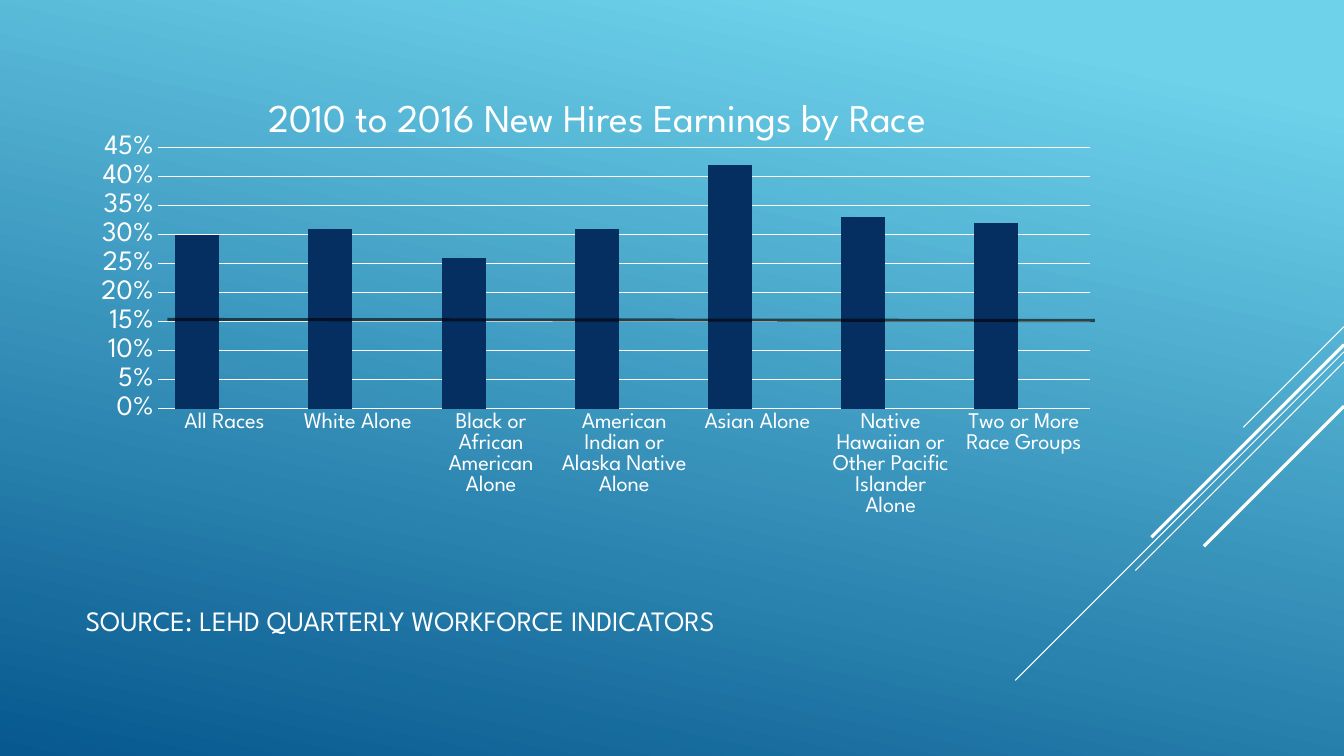
from lxml import etree
from pptx import Presentation
from pptx.chart.data import CategoryChartData
from pptx.dml.color import RGBColor
from pptx.enum.chart import XL_CHART_TYPE as ChartType, XL_TICK_MARK as TickMark
from pptx.enum.shapes import MSO_CONNECTOR as Connector
from pptx.enum.text import MSO_ANCHOR as Anchor
from pptx.oxml import parse_xml
from pptx.oxml.ns import nsdecls, qn
from pptx.util import Inches, Pt

WHITE = RGBColor(0xFF, 0xFF, 0xFF)
BLACK = RGBColor(0, 0, 0)
SKY = RGBColor(0x6E, 0xD2, 0xEB)
DEEP_BLUE = RGBColor(0x06, 0x58, 0x8E)
NAVY = RGBColor(0x05, 0x2F, 0x61)
MAGENTA = RGBColor(0xA5, 0x0E, 0x82)
GREEN = RGBColor(0x14, 0x96, 0x7C)
FONT = "League Spartan"
SLIDE_W, SLIDE_H = 13.33, 7.5

EARNINGS = {
    "All Races": 0.30,
    "White Alone": 0.31,
    "Black or African American Alone": 0.26,
    "American Indian or Alaska Native Alone": 0.31,
    "Asian Alone": 0.42,
    "Native Hawaiian or Other Pacific Islander Alone": 0.33,
    "Two or More Race Groups": 0.32,
}
# Diagonals: height at the right edge, horizontal run, line width
DIAGONALS = [
    (3.24, 1.00, 0.75),
    (3.49, 3.26, 0.75),
    (3.59, 2.07, 0.75),
    (3.42, 1.91, 2.25),
    (4.03, 1.39, 2.25),
]


def set_font(font, size, color=WHITE):
    font.name, font.size, font.bold = FONT, Pt(size), False
    font.color.rgb = color


def write(tf, text, size=20, color=WHITE):
    r = tf.paragraphs[0].add_run()
    r.text = text
    set_font(r.font, size, color)


def add_line(s, start, end, color, width, alpha=None):
    line = s.shapes.add_connector(Connector.STRAIGHT, *map(Inches, start + end))
    line.line.color.rgb = color
    line.line.width = Pt(width)
    if alpha is not None:
        rgb = line.line._ln.find(".//" + qn("a:srgbClr"))
        etree.SubElement(rgb, qn("a:alpha"), val=str(alpha * 1000))
    etree.SubElement(line._element.spPr, qn("a:effectLst"))


def paint_background(s):
    fill = s.background.fill
    fill.gradient()
    fill.gradient_angle = 258
    for stop, color, position in zip(fill.gradient_stops, (SKY, DEEP_BLUE), (0.1, 1)):
        stop.color.rgb = color
        stop.position = position


def add_diagonals(s, right):
    for y, run, width in DIAGONALS:
        add_line(s, (right, y), (right - run, y + run), WHITE, width)


def add_source(s, x, y, w, h):
    tf = s.shapes.add_textbox(*map(Inches, (x, y, w, h))).text_frame
    tf.word_wrap = True
    tf.vertical_anchor = Anchor.MIDDLE
    write(tf, "SOURCE: LEHD QUARTERLY WORKFORCE INDICATORS")


def style_axis(axis, size):
    axis.major_tick_mark = axis.minor_tick_mark = TickMark.NONE
    set_font(axis.tick_labels.font, size)


def fix_plot_area(chart, **fractions):
    """Pin the inner plot area to fractions x, y, w, h of the chart."""
    plot_area = chart._chartSpace.chart.plotArea
    for old in plot_area.findall(qn("c:layout")):
        plot_area.remove(old)
    sizes = "".join(f'<c:{k} val="{v}"/>' for k, v in fractions.items())
    plot_area.insert(0, parse_xml(
        f'<c:layout {nsdecls("c")}><c:manualLayout><c:layoutTarget val="inner"/>'
        f'<c:xMode val="edge"/><c:yMode val="edge"/>{sizes}'
        '</c:manualLayout></c:layout>'))


def add_earnings_chart(s, x, y, w, h):
    data = CategoryChartData(number_format="0%")
    data.categories = list(EARNINGS)
    blank = [None] * len(EARNINGS)
    for i, values in enumerate((list(EARNINGS.values()), blank, blank), 1):
        data.add_series(f"Series {i}", values)
    chart = s.shapes.add_chart(
        ChartType.COLUMN_CLUSTERED, *map(Inches, (x, y, w, h)), data).chart
    set_font(chart.font, 20)
    chart.has_legend = False
    chart.has_title = True
    write(chart.chart_title.text_frame, "2010 to 2016 New Hires Earnings by Race", 28)
    chart.chart_title.include_in_layout = False

    plot = chart.plots[0]
    plot.gap_width, plot.overlap = 78, 38
    plot.vary_by_categories = False
    for series, color in zip(plot.series, (NAVY, MAGENTA, GREEN)):
        series.format.fill.solid()
        series.format.fill.fore_color.rgb = color

    cat, val = chart.category_axis, chart.value_axis
    style_axis(cat, 16)
    style_axis(val, 20)
    val.minimum_scale, val.maximum_scale, val.major_unit = 0, 0.45, 0.05
    val.tick_labels.number_format = "0%"
    val.tick_labels.number_format_is_linked = False
    val.format.line.fill.background()
    for line in (cat.format.line, val.major_gridlines.format.line):
        line.color.rgb = WHITE
        line.width = Pt(0.75)
    fix_plot_area(chart, x=0.074, y=0.15, w=0.905, h=0.565)

    add_line(s, (x + 0.85, y + 2.39), (x + 10.05, y + 2.4), BLACK, 2.25, alpha=60)


def main():
    prs = Presentation()
    prs.slide_width, prs.slide_height = Inches(SLIDE_W), Inches(SLIDE_H)
    s = prs.slides.add_slide(prs.slide_layouts[6])
    paint_background(s)
    add_diagonals(s, SLIDE_W)
    add_source(s, 0.75, 5.9, 9.33, 0.5)
    add_earnings_chart(s, 0.81, 0.78, 10.22, 4.58)
    prs.save("out.pptx")


if __name__ == "__main__":
    main()
